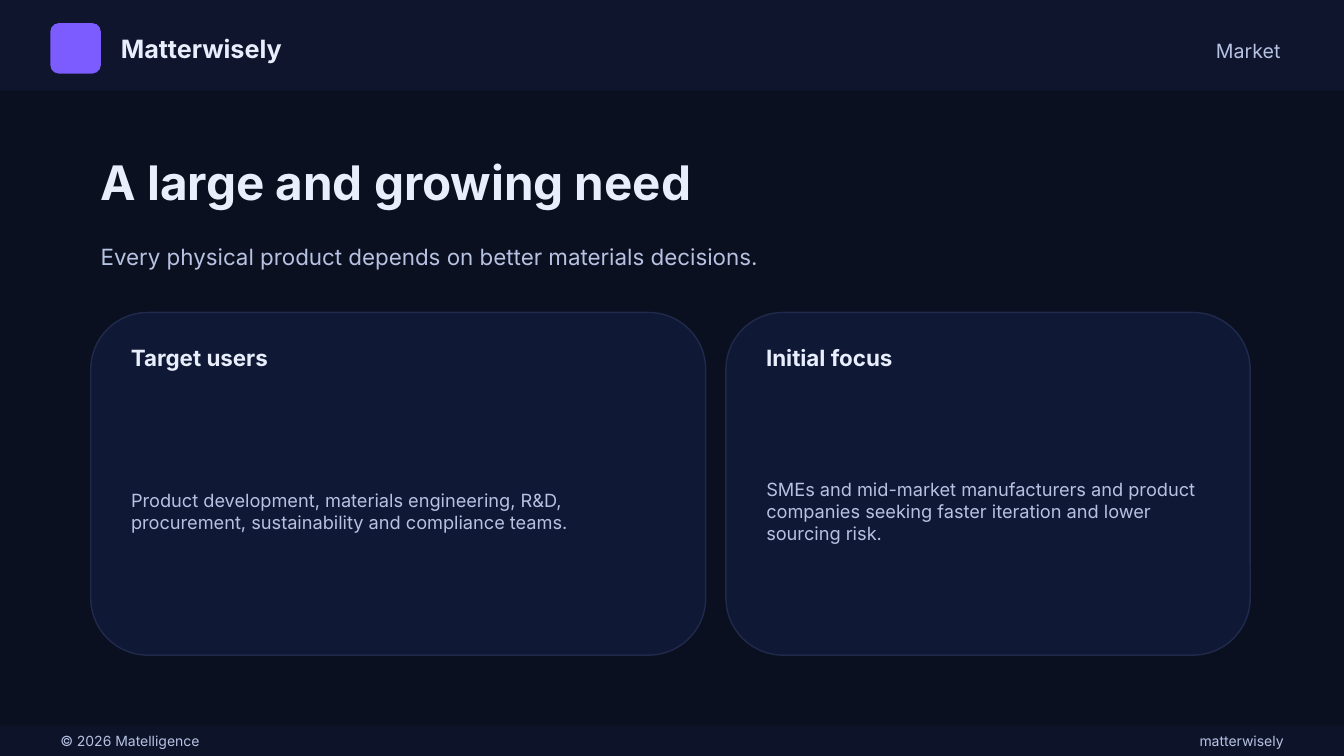
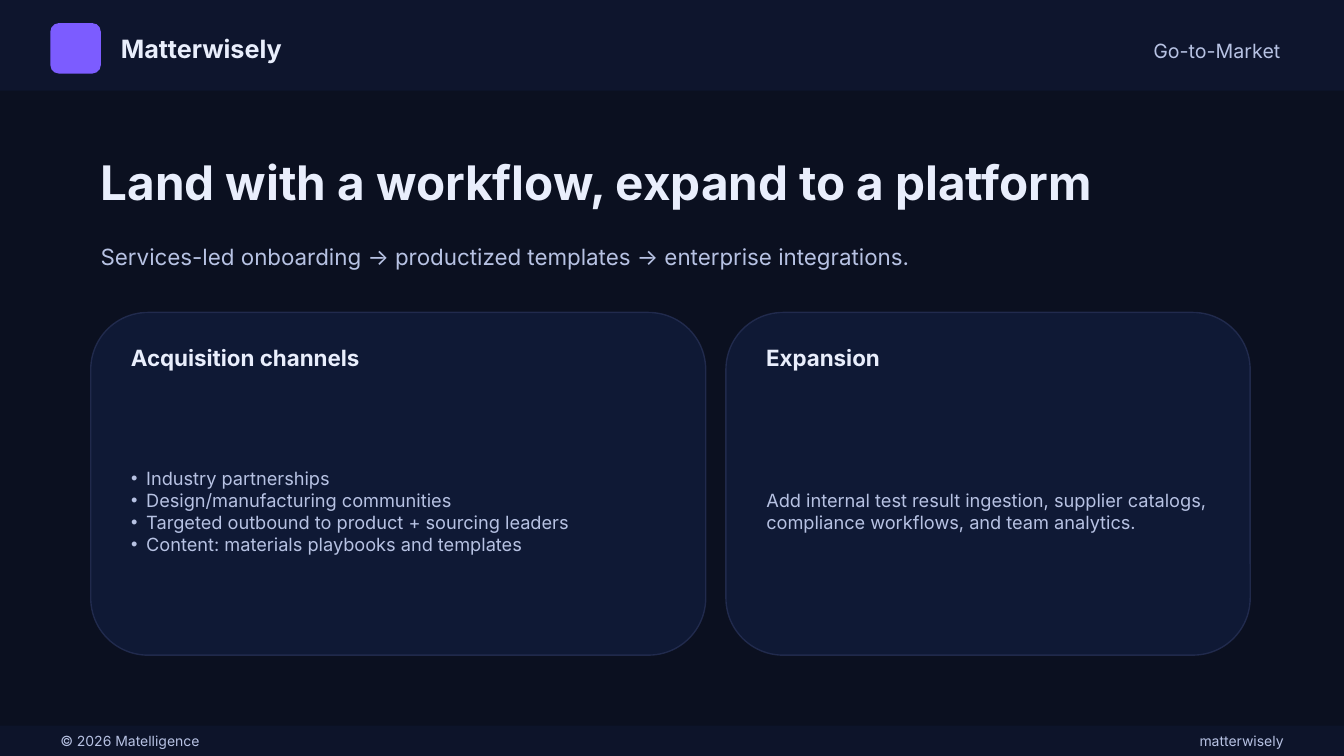
from dataclasses import dataclass
from typing import Any

from lxml.etree import SubElement
from pptx import Presentation
from pptx.dml.color import RGBColor
from pptx.enum.shapes import MSO_SHAPE
from pptx.enum.text import MSO_ANCHOR, MSO_AUTO_SIZE, PP_ALIGN
from pptx.oxml.ns import qn
from pptx.util import Inches, Pt

SLIDE_WIDTH, SLIDE_HEIGHT = 13.33, 7.5
HEADER_HEIGHT, FOOTER_HEIGHT = 0.9, 0.3
FOOTER_TOP = SLIDE_HEIGHT - FOOTER_HEIGHT
CARD_TOP, CARD_HEIGHT, CARD_PADDING = 3.1, 3.4, 0.3
BULLET_INDENT = 0.15
BRAND = "Matterwisely"

COLORS = {
    "background": "0B1020",
    "band": "0F1730",
    "card": "101A38",
    "card_line": "2A345B",
    "accent": "7C5CFF",
    "heading": "E9EEFC",
    "body": "B7C2E3",
}


@dataclass(frozen=True)
class Box:
    left: float
    top: float
    width: float
    height: float

    def lengths(self) -> tuple:
        return tuple(Inches(v) for v in (self.left, self.top, self.width, self.height))


@dataclass(frozen=True)
class TextStyle:
    size: int
    color: str = "body"
    bold: bool = False
    align: PP_ALIGN = PP_ALIGN.LEFT


@dataclass(frozen=True)
class Card:
    heading: str
    lines: tuple[str, ...]


@dataclass(frozen=True)
class Page:
    section: str
    title: str
    subtitle: str
    cards: tuple[Card, Card]


BRAND_STYLE = TextStyle(18, "heading", True)
SECTION_STYLE = TextStyle(14, align=PP_ALIGN.RIGHT)
TITLE_STYLE = TextStyle(34, "heading", True)
SUBTITLE_STYLE = TextStyle(16)
CARD_HEADING_STYLE = TextStyle(16, "heading", True)
CARD_BODY_STYLE = TextStyle(13)
FOOTER_STYLE = TextStyle(10)
FOOTER_RIGHT_STYLE = TextStyle(10, align=PP_ALIGN.RIGHT)

CARD_BOXES = (
    Box(0.9, CARD_TOP, 6.1, CARD_HEIGHT),
    Box(7.2, CARD_TOP, 5.2, CARD_HEIGHT),
)

PAGES = (
    Page(
        "Market",
        "A large and growing need",
        "Every physical product depends on better materials decisions.",
        (
            Card("Target users", (
                "Product development, materials engineering, R&D, procurement, "
                "sustainability and compliance teams.",
            )),
            Card("Initial focus", (
                "SMEs and mid-market manufacturers and product companies seeking "
                "faster iteration and lower sourcing risk.",
            )),
        ),
    ),
    Page(
        "Go-to-Market",
        "Land with a workflow, expand to a platform",
        "Services-led onboarding → productized templates → enterprise integrations.",
        (
            Card("Acquisition channels", (
                "Industry partnerships",
                "Design/manufacturing communities",
                "Targeted outbound to product + sourcing leaders",
                "Content: materials playbooks and templates",
            )),
            Card("Expansion", (
                "Add internal test result ingestion, supplier catalogs, "
                "compliance workflows, and team analytics.",
            )),
        ),
    ),
)


def rgb(name: str) -> RGBColor:
    return RGBColor.from_string(COLORS[name])


def set_opacity(color_parent: Any, percent: int) -> None:
    for color in color_parent.iter(qn("a:srgbClr")):
        SubElement(color, qn("a:alpha"), val=str(percent * 1000))


def add_panel(slide: Any, kind: MSO_SHAPE, box: Box, fill: str, opacity: int = 100) -> Any:
    shape = slide.shapes.add_shape(kind, *box.lengths())
    shape.shadow.inherit = False
    shape.fill.solid()
    shape.fill.fore_color.rgb = rgb(fill)
    shape.line.fill.background()
    if opacity < 100:
        set_opacity(shape.element.spPr, opacity)
    return shape


def set_bullet(paragraph: Any, bulleted: bool) -> None:
    properties = paragraph._p.get_or_add_pPr()
    indent = Inches(BULLET_INDENT) if bulleted else 0
    properties.set("marL", str(indent))
    properties.set("indent", str(-indent))
    if bulleted:
        SubElement(properties, qn("a:buChar"), char="•")
    else:
        SubElement(properties, qn("a:buNone"))


def write_text(shape: Any, lines: tuple[str, ...], style: TextStyle) -> None:
    """Fill a text box or placeholder; several lines become a bulleted list."""
    frame = shape.text_frame
    frame_format = {
        "word_wrap": True,
        "auto_size": MSO_AUTO_SIZE.NONE,
        "vertical_anchor": MSO_ANCHOR.MIDDLE,
    }
    paragraph_format = {
        "alignment": style.align,
        "line_spacing": 1.0,
        "space_before": Pt(0),
        "space_after": Pt(0),
    }
    font_format = {"name": "Inter", "size": Pt(style.size), "bold": style.bold}
    for name, value in frame_format.items():
        setattr(frame, name, value)
    for index, line in enumerate(lines):
        paragraph = frame.add_paragraph() if index else frame.paragraphs[0]
        for name, value in paragraph_format.items():
            setattr(paragraph, name, value)
        set_bullet(paragraph, len(lines) > 1)
        run = paragraph.add_run()
        run.text = line
        for name, value in font_format.items():
            setattr(run.font, name, value)
        run.font.color.rgb = rgb(style.color)


def add_text(slide: Any, box: Box, text: str, style: TextStyle) -> None:
    write_text(slide.shapes.add_textbox(*box.lengths()), (text,), style)


def place_placeholder(placeholder: Any, box: Box, lines: tuple[str, ...], style: TextStyle) -> None:
    """Move a placeholder into its box, in front of the shapes drawn so far."""
    names = ("left", "top", "width", "height")
    for name, length in zip(names, box.lengths()):
        setattr(placeholder, name, length)
    placeholder.element.getparent().append(placeholder.element)
    write_text(placeholder, lines, style)


def add_header(slide: Any, section: str) -> None:
    add_panel(slide, MSO_SHAPE.RECTANGLE, Box(0, 0, SLIDE_WIDTH, HEADER_HEIGHT), "band", 85)
    add_panel(slide, MSO_SHAPE.ROUNDED_RECTANGLE, Box(0.5, 0.23, 0.5, 0.5), "accent")
    add_text(slide, Box(1.1, 0.28, 6, 0.4), BRAND, BRAND_STYLE)
    add_text(slide, Box(7.3, 0.3, 5.5, 0.4), section, SECTION_STYLE)


def add_footer(slide: Any) -> None:
    band = Box(0, FOOTER_TOP, SLIDE_WIDTH, FOOTER_HEIGHT)
    add_panel(slide, MSO_SHAPE.RECTANGLE, band, "band", 65)
    add_text(slide, Box(0.5, FOOTER_TOP, 6, FOOTER_HEIGHT), "© 2026 Matelligence", FOOTER_STYLE)
    add_text(slide, Box(7, FOOTER_TOP, 5.83, FOOTER_HEIGHT), BRAND.lower(), FOOTER_RIGHT_STYLE)


def add_card(slide: Any, box: Box, card: Card, body: Any) -> None:
    panel = add_panel(slide, MSO_SHAPE.ROUNDED_RECTANGLE, box, "card", 90)
    panel.line.color.rgb = rgb("card_line")
    panel.line.width = Pt(1)
    set_opacity(panel.line._ln, 70)
    left, width = box.left + CARD_PADDING, box.width - 2 * CARD_PADDING
    add_text(slide, Box(left, box.top + 0.25, width, 0.4), card.heading, CARD_HEADING_STYLE)
    place_placeholder(body, Box(left, box.top + 0.72, width, 2.5), card.lines, CARD_BODY_STYLE)


def add_page(presentation: Any, page: Page) -> None:
    slide = presentation.slides.add_slide(presentation.slide_layouts.get_by_name("Two Content"))
    title, *bodies = slide.placeholders
    add_header(slide, page.section)
    place_placeholder(title, Box(0.9, 1.4, 11.6, 0.8), (page.title,), TITLE_STYLE)
    add_text(slide, Box(0.9, 2.25, 11.2, 0.6), page.subtitle, SUBTITLE_STYLE)
    for box, card, body in zip(CARD_BOXES, page.cards, bodies):
        add_card(slide, box, card, body)
    add_footer(slide)


def main() -> None:
    presentation = Presentation()
    presentation.slide_width = Inches(SLIDE_WIDTH)
    presentation.slide_height = Inches(SLIDE_HEIGHT)
    background = presentation.slide_master.background.fill
    background.solid()
    background.fore_color.rgb = rgb("background")
    for page in PAGES:
        add_page(presentation, page)
    presentation.save("out.pptx")


if __name__ == "__main__":
    main()
